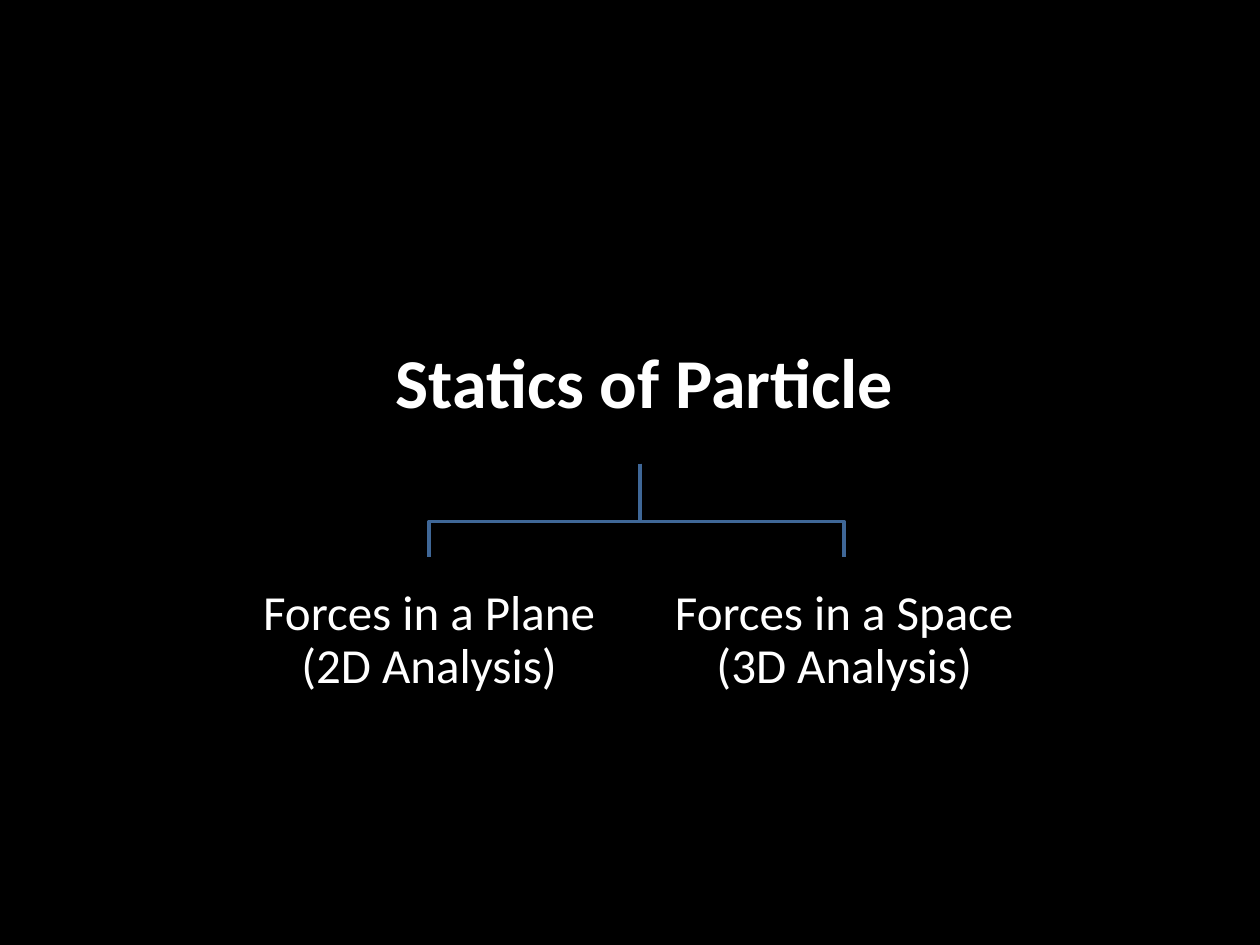
from pptx import Presentation
from pptx.dml.color import RGBColor
from pptx.enum.text import MSO_ANCHOR, PP_ALIGN
from pptx.util import Inches, Pt

MIDDLE, TOP = MSO_ANCHOR.MIDDLE, MSO_ANCHOR.TOP
CENTER = PP_ALIGN.CENTER
BLACK, WHITE, BLUE = "000000", "FFFFFF", "3F6797"
FONT = "Calibri"

TITLE = "Statics of Particle"
BRANCHES = [
    (["Forces in a Space", "(3D Analysis)"], 5, 3.4),
    (["Forces in a Plane", "(2D Analysis)"], 2.06, 2.69),
]
STEM_X, STEM_TOP, FORK_Y = 5.08, 3.68, 4.14
BRANCH_TOP, BRANCH_HEIGHT = 4.42, 1.34


def color(value):
    return RGBColor.from_string(value)


def add_text(slide, lines, box, size, bold=False, wrap=True, anchor=TOP, inset=None, spacing=1.0):
    frame = slide.shapes.add_textbox(*map(Inches, box)).text_frame
    frame.word_wrap = wrap
    frame.vertical_anchor = anchor
    if inset is not None:
        frame.margin_left = frame.margin_right = Inches(inset)
        frame.margin_top = frame.margin_bottom = Inches(inset)
    paragraph = frame.paragraphs[0]
    paragraph.alignment = CENTER
    paragraph.line_spacing = spacing
    for index, line in enumerate(lines):
        if index:
            paragraph.add_line_break()
        run = paragraph.add_run()
        run.text = line
        run.font.name = FONT
        run.font.size = Pt(size)
        run.font.bold = bold
        run.font.color.rgb = color(WHITE)


def add_elbow(slide, end_x):
    points = [(STEM_X, FORK_Y), (end_x, FORK_Y), (end_x, BRANCH_TOP)]
    builder = slide.shapes.build_freeform(Inches(STEM_X), Inches(STEM_TOP))
    builder.add_line_segments([(Inches(x), Inches(y)) for x, y in points], close=False)
    elbow = builder.convert_to_shape()
    elbow.shadow.inherit = False
    elbow.fill.background()
    elbow.line.color.rgb = color(BLUE)
    elbow.line.width = Pt(2)


def main():
    deck = Presentation()
    deck.slide_width, deck.slide_height = Inches(10), Inches(7.5)
    slide = deck.slides.add_slide(deck.slide_layouts[6])
    slide.background.fill.solid()
    slide.background.fill.fore_color.rgb = color(BLACK)

    for lines, left, width in BRANCHES:
        add_elbow(slide, left + width / 2)
    for lines, left, width in reversed(BRANCHES):
        add_text(slide, lines, (left, BRANCH_TOP, width, BRANCH_HEIGHT), 28,
                 anchor=MIDDLE, inset=0.02, spacing=0.9)
    add_text(slide, [TITLE], (3, 2.64, 4.23, 0.77), 40, bold=True, wrap=False)

    deck.save("out.pptx")


if __name__ == "__main__":
    main()
